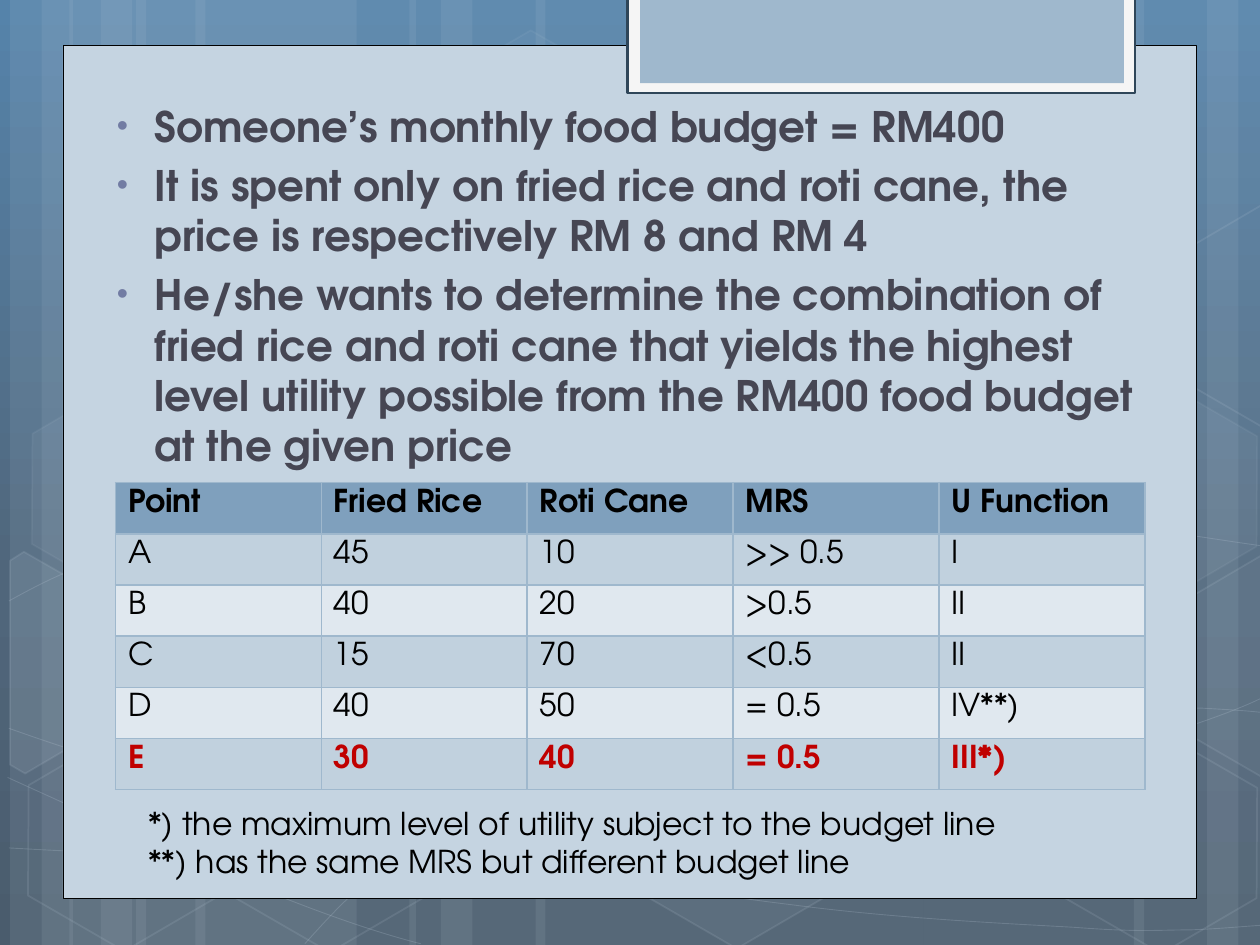
from copy import deepcopy

from lxml.etree import SubElement
from pptx import Presentation
from pptx.dml.color import RGBColor
from pptx.enum.shapes import MSO_SHAPE
from pptx.oxml import parse_xml
from pptx.oxml.ns import nsdecls, qn
from pptx.util import Inches, Pt

# The slide is a grid of 10 columns and 7.5 rows with square cells
COLUMNS, ROWS = 10, 7.5
CELL = Inches(1)
FONT = "TeX Gyre Adventor"
PALE, BLUE, BLACK = "C5D4E1", "9FB8CD", "000000"

BACKGROUND = [(0, "5583AA"), (0.62, "50667B"), (1, "4A5C6D")]

# Left column and width of each full-height stripe
STRIPES = [(1.08, 1.75), (0.08, 0.5), (0.33, 0.83), (1.55, 1.75), (0.55, 0.5),
           (0.8, 0.83), (7.33, 1.75), (9.58, 0.5), (9, 0.83), (4.25, 3.08),
           (3.25, 0.5), (3.5, 0.83)]

# Start point, then two handles and an end point for each bend
CURVES = [
    [(0.07, 6.73), (0.61, 6.76), (1.15, 6.79), (1.9, 6.78), (2.65, 6.77),
     (3.58, 6.75), (4.58, 6.65), (5.58, 6.55), (7, 6.36), (7.92, 6.17),
     (8.83, 5.98), (9.77, 5.68), (10.07, 5.51)],
    [(0.07, 4.77), (0.36, 4.61), (0.65, 4.46), (1.21, 4.31), (1.78, 4.16),
     (2.59, 3.94), (3.47, 3.87), (4.36, 3.8), (5.44, 3.79), (6.54, 3.87),
     (7.64, 3.95), (9.47, 4.26), (10.07, 4.34)],
    [(0.06, 6.17), (1.27, 6.72), (2.47, 7.27), (3.34, 7.49)],
    [(0.07, 5.78), (0.38, 5.89), (0.7, 6), (1.28, 6.16), (1.86, 6.31),
     (2.73, 6.56), (3.57, 6.73), (4.4, 6.9), (5.45, 7.08), (6.28, 7.18),
     (7.11, 7.29), (8, 7.33), (8.53, 7.36), (9.05, 7.4), (9.19, 7.38),
     (9.45, 7.38), (9.71, 7.37), (9.89, 7.35), (10.07, 7.34)],
    [(2.42, 7.49), (2.6, 7.29), (2.78, 7.09), (3.02, 6.91), (3.26, 6.73),
     (3.6, 6.53), (3.88, 6.39), (4.16, 6.25), (4.33, 6.19), (4.7, 6.09),
     (5.06, 5.99), (5.73, 5.85), (6.08, 5.78), (6.44, 5.71), (6.49, 5.71),
     (6.8, 5.69), (7.11, 5.66), (7.6, 5.63), (7.94, 5.62), (8.29, 5.61),
     (8.86, 5.62), (8.86, 5.62), (9.08, 5.62), (9.31, 5.62), (9.53, 5.62),
     (9.71, 5.63), (9.88, 5.64), (9.97, 5.65), (10.06, 5.66), (10.03, 5.65),
     (10.06, 5.66)],
]

# Left column, top row, fill opacity and line opacity in percent
HEXAGONS = [(3.34, 0.36, 4, 8), (4.97, 5.89, 6, 12), (0.11, 5.91, 0, 12),
            (0.14, 3.12, 7, 8), (1.74, 5.92, 0, 12), (7.53, 4.53, 10, 12),
            (8.34, 5.93, 0, 12), (8.34, 3.14, 7, 8)]

# Hexagons cut off by the slide's edge: fill opacity and corners
CUT_HEXAGONS = [
    (10, [(0.08, 4.45), (0.19, 4.38), (0.96, 4.82), (0.95, 5.7), (0.2, 6.14), (0.08, 6.07)]),
    (4, [(9.26, 4.85), (10.01, 4.41), (10.09, 4.46), (10.09, 6.13), (10.02, 6.17), (9.26, 5.73)]),
    (0, [(9.26, 2.07), (10.01, 1.63), (10.1, 1.68), (10.09, 3.35), (10.02, 3.39), (9.26, 2.95)]),
]

PROBLEM = [
    "Someone’s monthly food budget = RM400",
    "It is spent only on fried rice and roti cane, the price is respectively RM 8 and RM 4",
    "He/she wants to determine the combination of fried rice and roti cane that yields "
    "the highest level utility possible from the RM400 food budget at the given price",
]
CHOICES = [
    ["Point", "Fried Rice", "Roti Cane", "MRS", "U Function"],
    ["A", "45", "10", ">> 0.5", "I"],
    ["B", "40", "20", ">0.5", "II"],
    ["C", "15", "70", "<0.5", "II"],
    ["D", "40", "50", "= 0.5", "IV**)"],
    ["E", "30", "40", "= 0.5", "III*)"],
]
FOOTNOTES = ["*) the maximum level of utility subject to the budget line",
             "**) has the same MRS but different budget line"]

PROBLEM_FORMAT = {"name": FONT, "size": Pt(24), "bold": True}
PLAIN_FORMAT = {"name": FONT, "size": Pt(18), "bold": False}
STRONG_FORMAT = PLAIN_FORMAT | {"bold": True}


def grid(*cells):
    return [round(cell * CELL) for cell in cells]


def paint(fill, colour, opacity=100):
    """Fill with a hex colour; an opacity of 0 means no fill."""
    if not opacity:
        fill.background()
        return
    fill.solid()
    fill.fore_color.rgb = RGBColor.from_string(colour)
    if opacity < 100:
        srgb = fill._xPr.find(".//" + qn("a:srgbClr"))
        SubElement(srgb, qn("a:alpha"), val=str(opacity * 1000))


def finish(shape, fill, line=(PALE, 0), width=1):
    """Each of fill and line is a colour, optionally with an opacity."""
    shape.shadow.inherit = False
    paint(shape.fill, *fill)
    if line[-1]:
        shape.line.width = Pt(width)
    paint(shape.line.fill, *line)


def add_preset(slide, kind, box, *look):
    shape = slide.shapes.add_shape(kind, *grid(*box))
    finish(shape, *look)
    return shape


def add_outline(slide, points, closed, *look):
    start, *rest = [grid(*point) for point in points]
    builder = slide.shapes.build_freeform(*start)
    builder.add_line_segments(rest, close=closed)
    shape = builder.convert_to_shape()
    finish(shape, *look)
    return shape


def bend(shape):
    """Turn each three straight segments into one cubic bend."""
    segments = list(shape._element.iter(qn("a:lnTo")))
    for first in range(0, len(segments), 3):
        cubic = SubElement(segments[first].getparent(), qn("a:cubicBezTo"))
        for segment in segments[first:first + 3]:
            cubic.append(segment[0])
            segment.getparent().remove(segment)


def write(paragraph, text, look, colour=BLACK):
    font = paragraph.add_run().font
    paragraph.runs[0].text = text
    for attribute, value in look.items():
        setattr(font, attribute, value)
    paint(font.fill, colour)


def add_text(slide, box, lines, look, colour=BLACK, wrap=True):
    frame = slide.shapes.add_textbox(*grid(*box)).text_frame
    frame.word_wrap = wrap
    for i, line in enumerate(lines):
        write(frame.add_paragraph() if i else frame.paragraphs[0], line, look, colour)
    return frame.paragraphs


def add_bullet(paragraph):
    paragraph.space_before = Pt(4.8)
    properties = paragraph._p.get_or_add_pPr()
    for side, indent in {"marL": 0.38, "indent": -0.3}.items():
        properties.set(side, str(Inches(indent)))
    for xml in ('<a:buClr %s><a:srgbClr val="727CA3"/></a:buClr>',
                '<a:buSzPct %s val="76000"/>',
                '<a:buFont %s typeface="Arial"/>', '<a:buChar %s char="•"/>'):
        properties.append(parse_xml(xml % nsdecls("a")))


def add_borders(cell):
    for side in "LRTB":
        cell._tc.get_or_add_tcPr().append(parse_xml(
            f'<a:ln{side} {nsdecls("a")} w="{Pt(1)}"><a:solidFill>'
            f'<a:srgbClr val="{BLUE}"/></a:solidFill></a:ln{side}>'))


def add_choices(slide, box):
    table = slide.shapes.add_table(len(CHOICES), len(CHOICES[0]), *grid(*box)).table
    table.horz_banding = False
    last = len(CHOICES) - 1
    for r, row in enumerate(CHOICES):
        band = "7FA0BD" if r == 0 else ("E0E8EF", "C1D1DE")[r % 2]
        look = STRONG_FORMAT if r in (0, last) else PLAIN_FORMAT
        for c, text in enumerate(row):
            cell = table.cell(r, c)
            add_borders(cell)
            paint(cell.fill, band)
            write(cell.text_frame.paragraphs[0], text, look, "C00000" if r == last else BLACK)


def add_background(slide):
    fill = slide.background.fill
    fill.gradient()
    fill.gradient_angle = 270
    stops = slide._element.find(".//" + qn("a:gsLst"))
    stops.append(deepcopy(stops[0]))
    for stop, (position, colour) in zip(fill.gradient_stops, BACKGROUND):
        stop.position = position
        stop.color.rgb = RGBColor.from_string(colour)


def main():
    deck = Presentation()
    deck.slide_width, deck.slide_height = grid(COLUMNS, ROWS)
    slide = deck.slides.add_slide(deck.slide_layouts[6])

    # Backdrop of stripes, curves and hexagons
    add_background(slide)
    for left, width in STRIPES:
        add_preset(slide, MSO_SHAPE.RECTANGLE, (left, 0, width, ROWS), (PALE, 10))
    for curve in CURVES:
        bend(add_outline(slide, curve, False, (PALE, 0), (PALE, 20), 0.5))
    for left, top, fill, line in HEXAGONS:
        hexagon = add_preset(slide, MSO_SHAPE.HEXAGON, (left, top, 1.75, 1.52),
                             (PALE, fill), (PALE, line))
        hexagon.rotation = 30
        hexagon.adjustments[0], hexagon.adjustments[1] = 0.285, 1.155
    for fill, corners in CUT_HEXAGONS:
        add_outline(slide, corners, True, (PALE, fill), (PALE, 12))

    # Page and its tab
    for box, *look in [((0.5, 0.36, 9, 6.77), (PALE,), (BLACK,), 0.5),
                       ((4.98, -0.02, 4.03, 0.76), ("F5F5F5",), ("2F4659",), 1.25),
                       ((5.08, -0.02, 3.84, 0.68), (BLUE,))]:
        add_preset(slide, MSO_SHAPE.RECTANGLE, box, *look)

    # Problem, table of choices and footnotes
    for paragraph in add_text(slide, (0.75, 0.75, 8.5, 3), PROBLEM, PROBLEM_FORMAT, "464653"):
        add_bullet(paragraph)
    add_choices(slide, (11 / 12, 3.83, 8.17, 2.44))
    add_text(slide, (1.08, 6.33, 7.03, 0.71), FOOTNOTES, PLAIN_FORMAT, wrap=False)

    deck.save("out.pptx")


if __name__ == "__main__":
    main()
